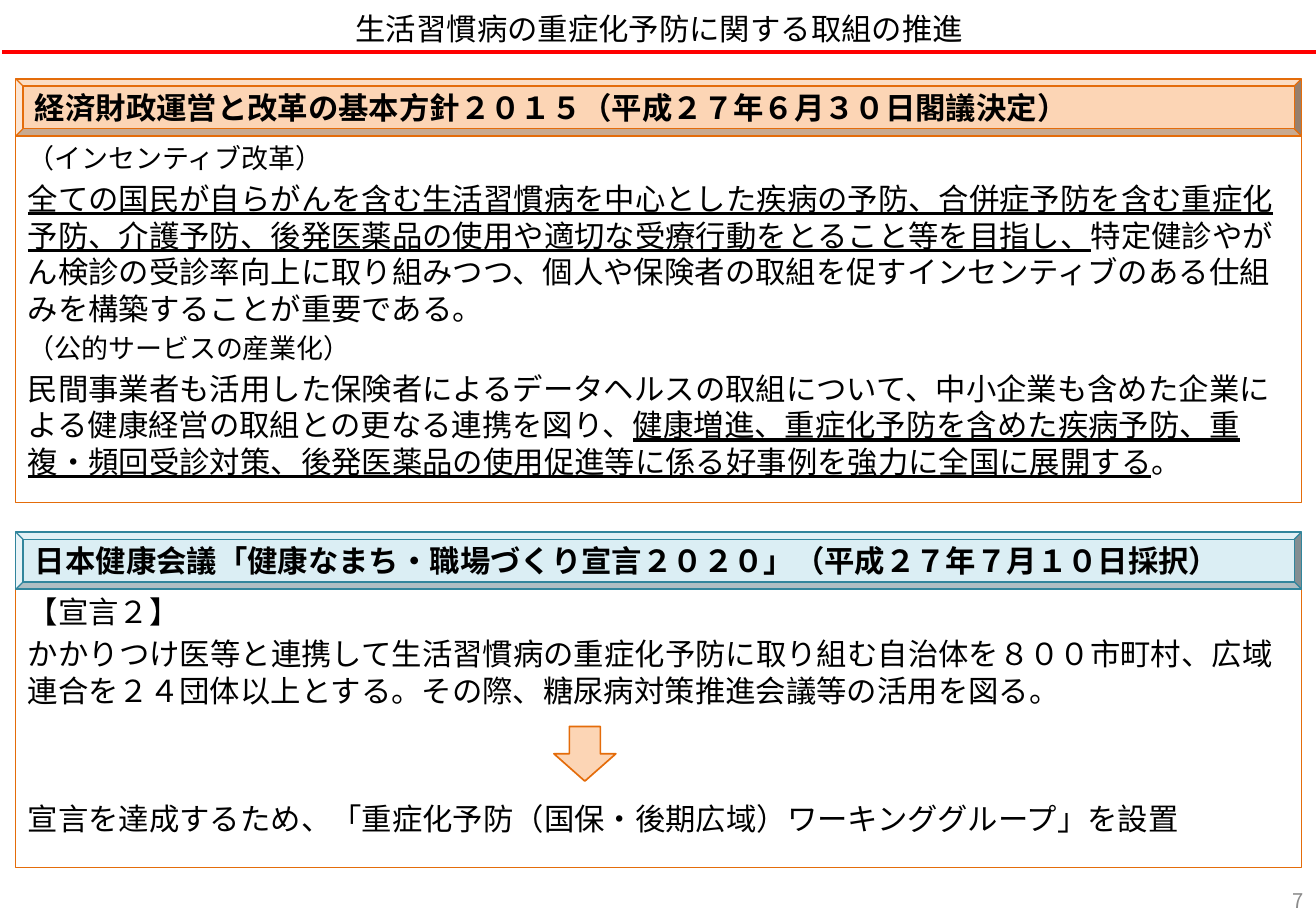
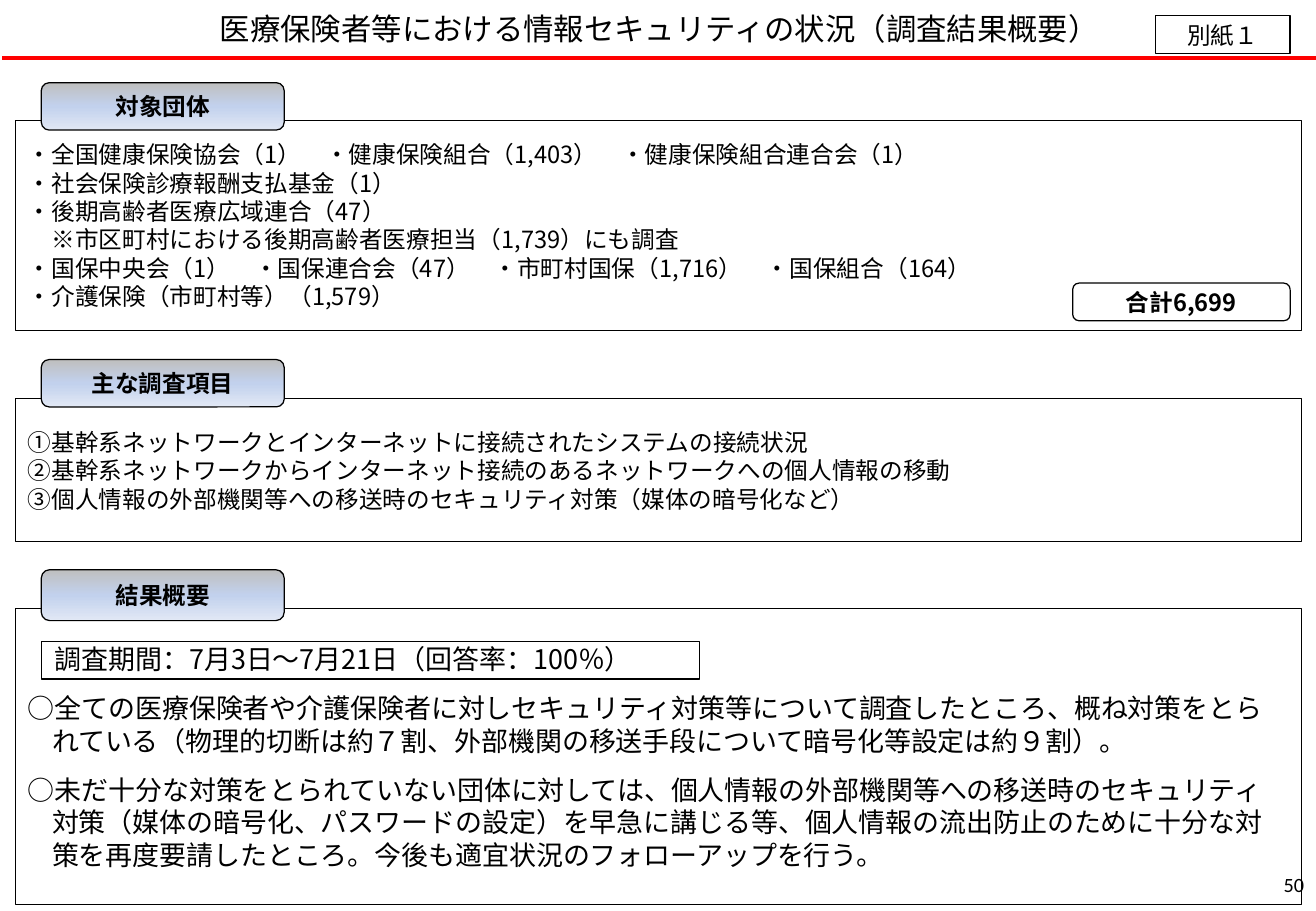
import copy
import pptx
import pptx.util
import pptx.dml.color
import pptx.enum.shapes
import pptx.enum.text
import pptx.oxml
import pptx.oxml.ns

Pt = pptx.util.Pt
KIND = pptx.enum.shapes.MSO_SHAPE
ALIGN = pptx.enum.text.PP_ALIGN
ANCHOR = pptx.enum.text.MSO_ANCHOR

# Shared look
HEX = {"ink": "000000", "rule": "FF0000", "orange": "E46C0A", "peach": "FCD5B5",
       "teal": "31859C", "ice": "DBEEF4", "gray": "8C8C8C"}
FADE = [(0, "BFBFBF"), (0.5, "C2D1ED"), (1, "E1E8F5")]
NOTO, CAL = "Noto Sans CJK JP", "Calibri"
WIDE, HIGH = 780, 540
LEFT, SPAN = 9.4, 762      # panels and bands
TAB = 24.5                 # left edge of badges


def rgb(name):
    return pptx.dml.color.RGBColor.from_string(HEX.get(name, name))


def style(font, size, face, color="ink", bold=False):
    font.size, font.name, font.bold = Pt(size), face, bold
    font.color.rgb = rgb(color)
    asian = pptx.oxml.parse_xml('<a:ea %s typeface="%s"/>' % (pptx.oxml.ns.nsdecls("a"), face))
    font._element.find(pptx.oxml.ns.qn("a:latin")).addnext(asian)


def write(shape, paras, size, face, color="ink", bold=False, align=ALIGN.LEFT,
          anchor=ANCHOR.MIDDLE, hang=0):
    """Each paragraph is (runs, space before[, size]); a run marked '_' is underlined."""
    frame = shape.text_frame
    frame.word_wrap, frame.vertical_anchor = True, anchor
    for i, (runs, gap, *own) in enumerate(paras):
        para = frame.add_paragraph() if i else frame.paragraphs[0]
        pts = own[0] if own else size
        para.alignment, para.space_before = align, Pt(gap)
        if len(paras) > 1:
            para.line_spacing = Pt(round(pts * 1.2, 1))
        if hang:
            props = para._p.get_or_add_pPr()
            props.set("marL", str(Pt(hang)))
            props.set("indent", str(-Pt(hang)))
        style(para.font, pts, face, color, bold)
        for text in runs:
            run = para.add_run()
            run.text = text.lstrip("_")
            if text.startswith("_"):
                run.font.underline = True
    return frame


def box(slide, kind, area, line="ink", fill=None, width=0.75):
    shape = slide.shapes.add_shape(kind, *map(Pt, area))
    shape.shadow.inherit = False
    shape.line.color.rgb, shape.line.width = rgb(line), Pt(width)
    if fill:
        shape.fill.solid()
        shape.fill.fore_color.rgb = rgb(fill)
    else:
        shape.fill.background()
    return shape


def label(slide, text, area, size, face, color="ink", align=ALIGN.CENTER):
    shape = slide.shapes.add_textbox(*map(Pt, area))
    write(shape, [([text], 0)], size, face, color, align=align)


def head(slide, text, rule):
    label(slide, text, (1.5, 0, 778.5, 34), 18, NOTO)
    line = slide.shapes.add_connector(pptx.enum.shapes.MSO_CONNECTOR.STRAIGHT,
                                      Pt(1.5), Pt(rule), Pt(WIDE), Pt(rule))
    line.line.color.rgb, line.line.width = rgb("rule"), Pt(2.5)
    line._element.spPr.append(
        pptx.oxml.parse_xml("<a:effectLst %s/>" % pptx.oxml.ns.nsdecls("a")))


def page(slide, text, mid, face, color):
    label(slide, text, (680, mid - 6, 100, 12), 12, face, color, ALIGN.RIGHT)


def band(slide, text, top, line, fill):
    shape = box(slide, KIND.BEVEL, (LEFT, top, SPAN, 33.8), line, fill)
    write(shape, [([text], 0)], 18, CAL, bold=True)


def panel(slide, top, high, paras, size, face, line="ink", **more):
    shape = box(slide, KIND.RECTANGLE, (LEFT, top, SPAN, high), line)
    return write(shape, paras, size, face, **more)


def badge(slide, text, top, high=28.1):
    shape = box(slide, KIND.ROUNDED_RECTANGLE, (TAB, top, 144, high))
    shape.fill.gradient()
    shape.fill.gradient_angle = 270
    stops = shape._element.spPr.find(".//" + pptx.oxml.ns.qn("a:gsLst"))
    stops.append(copy.deepcopy(stops[0]))
    for stop, (place, color) in zip(shape.fill.gradient_stops, FADE):
        stop.position, stop.color.rgb = place, rgb(color)
    write(shape, [([text], 0)], 14, CAL, bold=True, align=ALIGN.CENTER)


def tag(slide, text, kind, area, face, bold=False):
    write(box(slide, kind, area), [([text], 0)], 14, face, bold=bold, align=ALIGN.CENTER)


def policy(slide):
    # Basic policy
    panel(slide, 80.6, 217.4, [
        (["（インセンティブ改革）"], 0, 16),
        (["_全ての国民が自らがんを含む生活習慣病を中心とした疾病の予防、合併症予防を含む重症化予防、"
          "介護予防、後発医薬品の使用や適切な受療行動をとること等を目指し、",
          "特定健診やがん検診の受診率向上に取り組みつつ、個人や保険者の取組を促す"
          "インセンティブのある仕組みを構築することが重要である。"], 3.6),
        (["（公的サービスの産業化）"], 3.2, 16),
        (["民間事業者も活用した保険者によるデータヘルスの取組について、中小企業も含めた企業による"
          "健康経営の取組との更なる連携を図り、",
          "_健康増進、重症化予防を含めた疾病予防、重複・頻回受診対策、"
          "後発医薬品の使用促進等に係る好事例を強力に全国に展開する", "。"], 3.6),
    ], 18, CAL, "orange", anchor=ANCHOR.TOP)
    band(slide, "経済財政運営と改革の基本方針２０１５（平成２７年６月３０日閣議決定）",
         46.8, "orange", "peach")

    # Declaration
    frame = panel(slide, 347.8, 166.3, [
        (["【宣言２】"], 0),
        (["かかりつけ医等と連携して生活習慣病の重症化予防に取り組む自治体を８００市町村、"
          "広域連合を２４団体以上とする。その際、糖尿病対策推進会議等の活用を図る。"], 3.6),
        (["宣言を達成するため、", "「重症化予防（国保・後期広域）ワーキンググループ」", "を設置"], 54.3),
    ], 18, CAL, "orange", anchor=ANCHOR.TOP)
    frame.paragraphs[-1].runs[1].font.name = "Arial"
    box(slide, KIND.DOWN_ARROW, (328.3, 430.6, 36.7, 32.4), "orange", "peach", 1)
    band(slide, "日本健康会議「健康なまち・職場づくり宣言２０２０」（平成２７年７月１０日採択）",
         315.4, "teal", "ice")

    head(slide, "生活習慣病の重症化予防に関する取組の推進", 31)
    page(slide, "7", 533.5, NOTO, "gray")


def survey(slide):
    head(slide, "医療保険者等における情報セキュリティの状況（調査結果概要）", 34.6)
    tag(slide, "別紙１", KIND.RECTANGLE, (684.7, 9.4, 79.9, 22.3), CAL)

    # Bodies surveyed
    bodies = ["・全国健康保険協会（1）　・健康保険組合（1,403）　・健康保険組合連合会（1）",
              "・社会保険診療報酬支払基金（1）",
              "・後期高齢者医療広域連合（47）",
              "　※市区町村における後期高齢者医療担当（1,739）にも調査",
              "・国保中央会（1）　・国保連合会（47）　・市町村国保（1,716）　・国保組合（164）",
              "・介護保険（市町村等）（1,579）"]
    panel(slide, 71.3, 124.6, [([text], 0) for text in bodies], 14, NOTO)
    badge(slide, "対象団体", 49)
    tag(slide, "合計6,699", KIND.ROUNDED_RECTANGLE, (635.8, 167.8, 128.9, 22.3), NOTO, True)

    # Survey items
    items = ["①基幹系ネットワークとインターネットに接続されたシステムの接続状況",
             "②基幹系ネットワークからインターネット接続のあるネットワークへの個人情報の移動",
             "③個人情報の外部機関等への移送時のセキュリティ対策（媒体の暗号化など）"]
    panel(slide, 236.2, 85, [([text], 0) for text in items], 14, NOTO)
    badge(slide, "主な調査項目", 213.1)

    # Results
    panel(slide, 360.7, 175.7, [
        (["　調査期間：7月3日～7月21日（回答率：100％）"], 0),
        (["○全ての医療保険者や介護保険者に対しセキュリティ対策等について調査したところ、"
          "概ね対策をとられている（物理的切断は約７割、外部機関の移送手段について"
          "暗号化等設定は約９割）。"], 10),
        (["○未だ十分な対策をとられていない団体に対しては、個人情報の外部機関等への移送時の"
          "セキュリティ対策（媒体の暗号化、パスワードの設定）を早急に講じる等、"
          "個人情報の流出防止のために十分な対策を再度要請したところ。"
          "今後も適宜状況のフォローアップを行う。"], 10),
    ], 16, NOTO, hang=14.4)
    badge(slide, "結果概要", 337.7, 30.2)
    box(slide, KIND.RECTANGLE, (TAB, 380.2, 390.2, 22.3))
    page(slide, "50", 524.5, CAL, "ink")


def main():
    deck = pptx.Presentation()
    deck.slide_width, deck.slide_height = Pt(WIDE), Pt(HIGH)
    for build in (policy, survey):
        build(deck.slides.add_slide(deck.slide_layouts[6]))
    deck.save("out.pptx")


if __name__ == "__main__":
    main()
